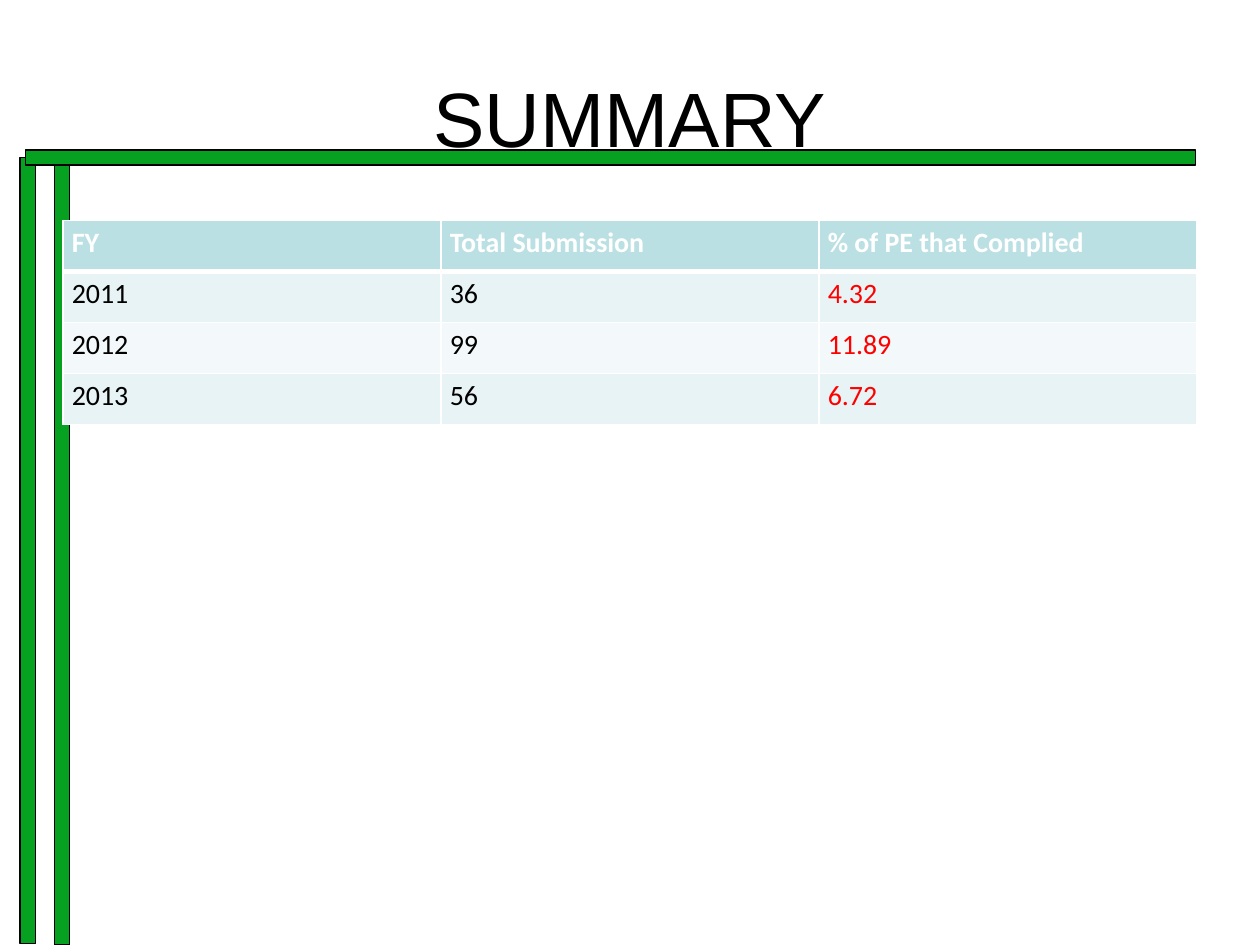
from pptx import Presentation
from pptx.dml.color import RGBColor
from pptx.enum.shapes import MSO_SHAPE
from pptx.enum.text import MSO_ANCHOR, PP_ALIGN
from pptx.oxml import parse_xml
from pptx.oxml.ns import nsdecls
from pptx.util import Inches, Pt

WIDTH, HEIGHT = 10, 7.5
MARGIN = 0.05 * WIDTH
COLUMN, ROW = 0.3 * WIDTH, 0.405
BAR = 0.12
COLORS = {
    "black": "000000",
    "white": "FFFFFF",
    "green": "07A121",
    "red": "FF0000",
    "header": "BBE0E3",
    "odd": "E7F3F4",
    "even": "F3F9FA",
}
RECORDS = [
    ("FY", "Total Submission", "% of PE that Complied"),
    ("2011", "36", "4.32"),
    ("2012", "99", "11.89"),
    ("2013", "56", "6.72"),
]


def color(name):
    return RGBColor.from_string(COLORS[name])


def write(frame, text, *, size, font, ink="black", bold=False,
          align=PP_ALIGN.LEFT, spacing=1):
    para = frame.paragraphs[0]
    para.alignment = align
    para.line_spacing = spacing
    span = para.add_run()
    span.text = text
    span.font.size = Pt(size)
    span.font.name = font
    span.font.bold = bold
    span.font.color.rgb = color(ink)


def add_bar(page, left, top, width, height):
    bar = page.shapes.add_shape(
        MSO_SHAPE.RECTANGLE, *map(Inches, (left, top, width, height)))
    bar.shadow.inherit = False
    bar.fill.solid()
    bar.fill.fore_color.rgb = color("green")
    bar.line.color.rgb = color("black")
    bar.line.width = Pt(0.75)


def add_title(page, text):
    box = page.shapes.add_textbox(
        *map(Inches, (MARGIN, 0.04 * HEIGHT, WIDTH - 2 * MARGIN, 1.25)))
    frame = box.text_frame
    frame.word_wrap = True
    frame.vertical_anchor = MSO_ANCHOR.MIDDLE
    write(frame, text, size=44, font="Arial", align=PP_ALIGN.CENTER)


def add_borders(cell, widths):
    properties = cell._tc.get_or_add_tcPr()
    for side, width in widths.items():
        properties.append(parse_xml(
            f'<a:ln{side} {nsdecls("a")} w="{Pt(width)}"><a:solidFill>'
            f'<a:srgbClr val="{COLORS["white"]}"/></a:solidFill></a:ln{side}>'))


def format_cell(cell, text, row, column):
    header = row == 0
    cell.margin_left = cell.margin_right = Inches(0.07)
    cell.margin_top = cell.margin_bottom = 0
    add_borders(cell, {"L": 1, "R": 1, "T": 3 if row == 1 else 1,
                       "B": 3 if header else 1})
    cell.fill.solid()
    band = "header" if header else "odd" if row % 2 else "even"
    cell.fill.fore_color.rgb = color(band)
    ink = "white" if header else "red" if column == 2 else "black"
    write(cell.text_frame, text, size=16, font="Calibri", ink=ink,
          bold=header, spacing=1.15)


def add_records(page, records):
    rows, columns = len(records), len(records[0])
    table = page.shapes.add_table(
        rows, columns,
        *map(Inches, (MARGIN, 1.75, columns * COLUMN, rows * ROW))).table
    table.horz_banding = False
    for row, record in enumerate(records):
        for column, text in enumerate(record):
            format_cell(table.cell(row, column), text, row, column)


def main():
    deck = Presentation()
    deck.slide_width, deck.slide_height = Inches(WIDTH), Inches(HEIGHT)
    page = deck.slides.add_slide(deck.slide_layouts[6])
    for left, top in ((0.16, 1.25), (0.43, 1.26)):
        add_bar(page, left, top, BAR, 6.24)
    add_bar(page, 0.2, 1.19, 9.29, BAR)
    add_title(page, "SUMMARY")
    add_records(page, RECORDS)
    deck.save("out.pptx")


if __name__ == "__main__":
    main()
